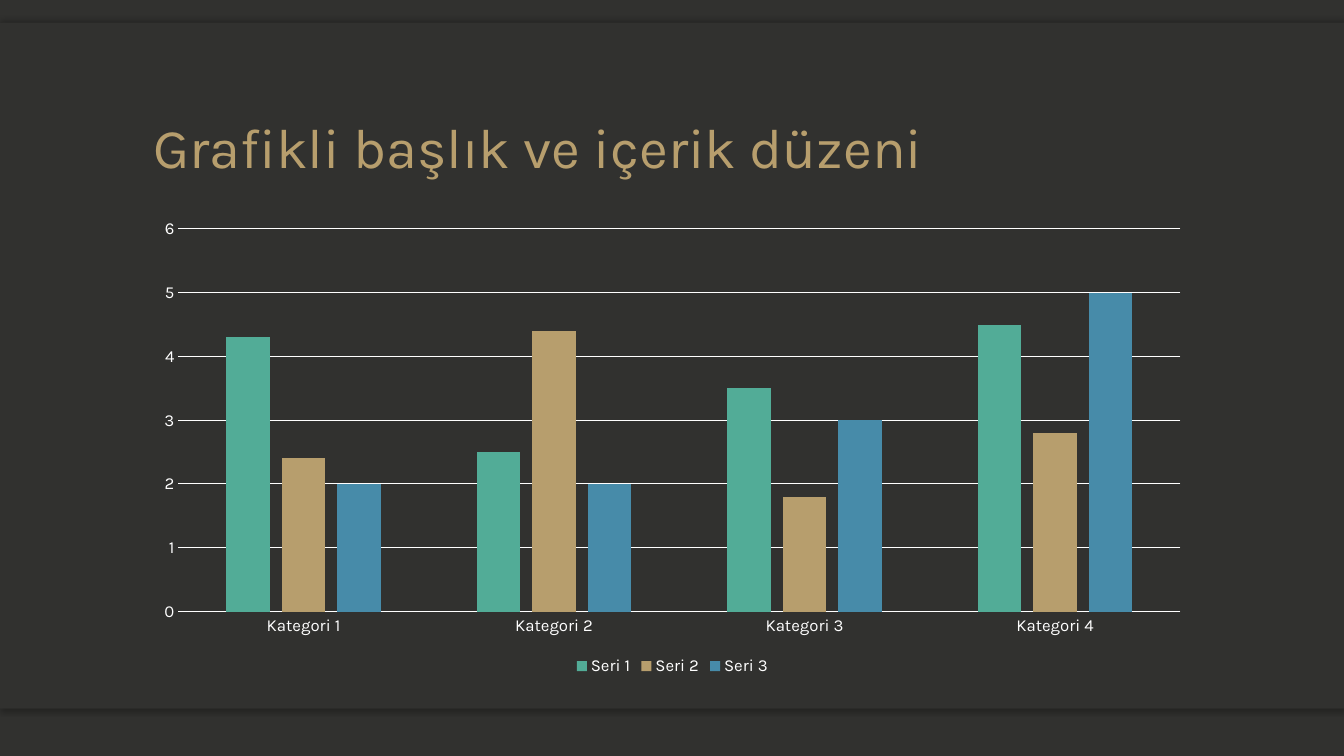
from dataclasses import dataclass

from lxml import etree
from pptx import Presentation
from pptx.chart.chart import Chart
from pptx.chart.data import CategoryChartData
from pptx.dml.color import RGBColor
from pptx.enum.chart import XL_CHART_TYPE as ChartType
from pptx.enum.chart import XL_LEGEND_POSITION as LegendPosition
from pptx.enum.chart import XL_TICK_MARK as TickMark
from pptx.enum.shapes import MSO_SHAPE as Preset
from pptx.enum.text import MSO_ANCHOR as Anchor
from pptx.enum.text import MSO_AUTO_SIZE as AutoSize
from pptx.enum.text import PP_ALIGN as Align
from pptx.oxml.ns import qn
from pptx.slide import Slide
from pptx.util import Cm, Pt


@dataclass(frozen=True)
class Theme:
    font: str = "Karla"
    dark: RGBColor = RGBColor(0x31, 0x31, 0x2F)
    white: RGBColor = RGBColor(0xFF, 0xFF, 0xFF)
    gold: RGBColor = RGBColor(0xB7, 0x9E, 0x6D)
    green: RGBColor = RGBColor(0x52, 0xAC, 0x97)
    blue: RGBColor = RGBColor(0x47, 0x8B, 0xA9)
    title_size: Pt = Pt(40)
    label_size: Pt = Pt(12)
    rule_width: Pt = Pt(0.75)


@dataclass(frozen=True)
class Panel:
    top: float
    height: float
    shadow_angle: int | None = None


@dataclass(frozen=True)
class Series:
    name: str
    values: tuple[float, ...]
    color: RGBColor


THEME = Theme()
PAGE_WIDTH, PAGE_HEIGHT = 33.87, 19.05
LEFT, CONTENT_WIDTH = 3.61, 26.67

# Two shadowed strips under one wide panel
PANELS = (
    Panel(16.61, 1.24, 90),
    Panel(0.58, 1.24, 270),
    Panel(0.58, 17.27),
)
CATEGORIES = [f"Kategori {number}" for number in range(1, 5)]
SERIES = (
    Series("Seri 1", (4.3, 2.5, 3.5, 4.5), THEME.green),
    Series("Seri 2", (2.4, 4.4, 1.8, 2.8), THEME.gold),
    Series("Seri 3", (2, 2, 3, 5), THEME.blue),
)


def add_panel(page: Slide, panel: Panel) -> None:
    shape = page.shapes.add_shape(
        Preset.RECTANGLE, 0, Cm(panel.top), Cm(PAGE_WIDTH), Cm(panel.height))
    shape.shadow.inherit = False
    shape.fill.solid()
    shape.fill.fore_color.rgb = THEME.dark
    shape.line.fill.background()
    if panel.shadow_angle is not None:
        effects = shape._element.spPr.find(qn("a:effectLst"))
        shadow = etree.SubElement(
            effects, qn("a:outerShdw"), blurRad=str(Pt(4)), dist=str(Pt(2)),
            dir=str(panel.shadow_angle * 60000), rotWithShape="0")
        color = etree.SubElement(shadow, qn("a:srgbClr"), val="000000")
        etree.SubElement(color, qn("a:alpha"), val="25000")


def format_title(page: Slide, text: str) -> None:
    title = page.shapes.title
    page.shapes._spTree.append(title._element)  # in front of the panels
    title.left, title.top = Cm(LEFT), Cm(1.17)
    title.width, title.height = Cm(CONTENT_WIDTH), Cm(3.51)
    frame = title.text_frame
    frame.text = text
    frame.word_wrap = True
    frame.auto_size = AutoSize.NONE
    frame.vertical_anchor = Anchor.BOTTOM
    para = frame.paragraphs[0]
    para.alignment = Align.LEFT
    para.line_spacing = 0.9
    para.font.name = THEME.font
    para.font.size = THEME.title_size
    para.font.color.rgb = THEME.gold


def format_axes(chart: Chart) -> None:
    category_axis, value_axis = chart.category_axis, chart.value_axis
    for axis in (category_axis, value_axis):
        axis.major_tick_mark = axis.minor_tick_mark = TickMark.NONE
    value_axis.minimum_scale, value_axis.maximum_scale = 0, 6
    value_axis.major_unit = 1
    value_axis.format.line.fill.background()
    for line in (category_axis.format.line,
                 value_axis.major_gridlines.format.line):
        line.color.rgb = THEME.white
        line.width = THEME.rule_width


def add_column_chart(page: Slide) -> None:
    data = CategoryChartData()
    data.categories = CATEGORIES
    for series in SERIES:
        data.add_series(series.name, series.values)
    chart = page.shapes.add_chart(
        ChartType.COLUMN_CLUSTERED, Cm(LEFT), Cm(5.28),
        Cm(CONTENT_WIDTH), Cm(11.86), data).chart
    chart.has_title = False
    chart.font.name = THEME.font
    chart.font.size = THEME.label_size
    chart.font.color.rgb = THEME.white
    format_axes(chart)

    # Columns
    plot = chart.plots[0]
    plot.gap_width, plot.overlap = 219, -27
    plot.vary_by_categories = False
    for columns, series in zip(plot.series, SERIES):
        columns.format.fill.solid()
        columns.format.fill.fore_color.rgb = series.color

    # Legend
    chart.has_legend = True
    chart.legend.position = LegendPosition.BOTTOM
    chart.legend.include_in_layout = False


def main() -> None:
    deck = Presentation()
    deck.slide_width, deck.slide_height = Cm(PAGE_WIDTH), Cm(PAGE_HEIGHT)
    page = deck.slides.add_slide(deck.slide_layouts.get_by_name("Title Only"))
    page.background.fill.solid()
    page.background.fill.fore_color.rgb = THEME.dark
    for panel in PANELS:
        add_panel(page, panel)
    format_title(page, "Grafikli başlık ve içerik düzeni")
    add_column_chart(page)
    deck.save("out.pptx")


if __name__ == "__main__":
    main()
